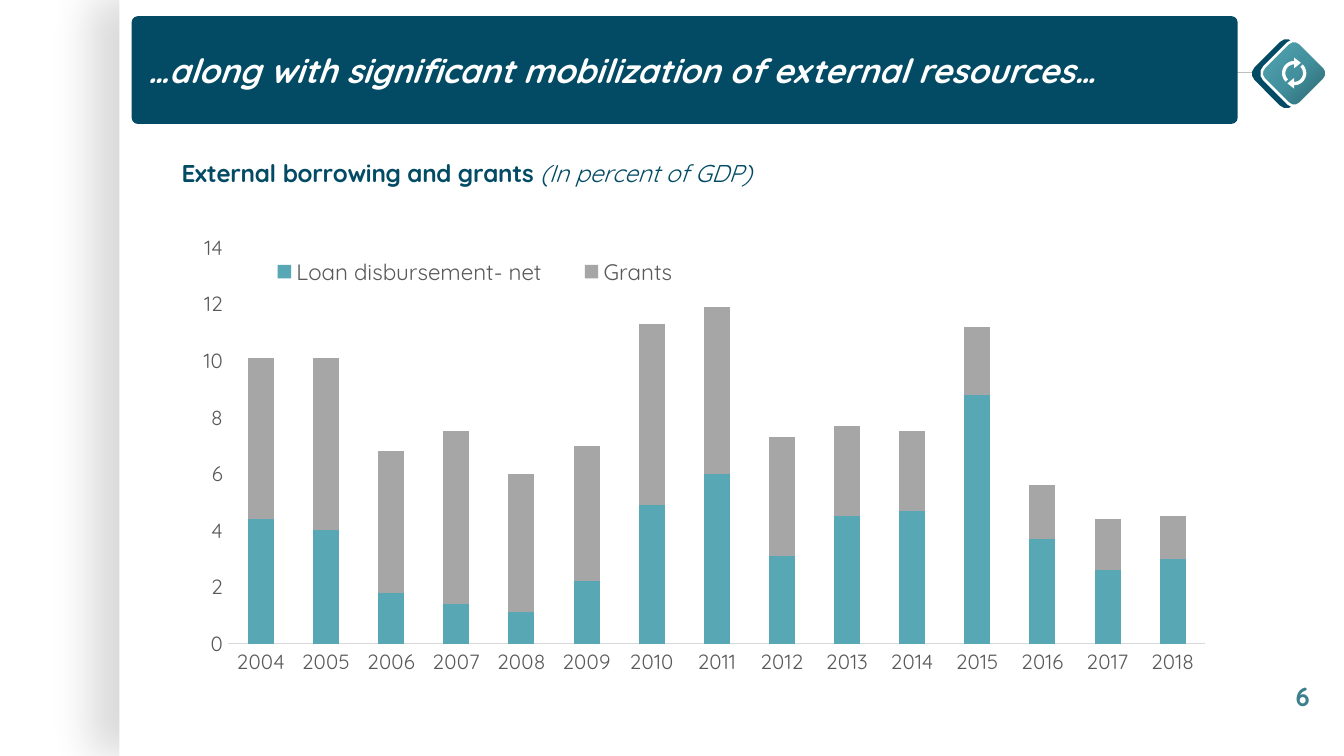
import math
from lxml import etree
from pptx import Presentation, oxml
from pptx import util as u
from pptx.chart.data import CategoryChartData
from pptx.dml.color import RGBColor
from pptx.enum import chart as ch, shapes, text
from pptx.oxml.ns import qn

Pt = u.Pt
NS = 'xmlns:a="http://schemas.openxmlformats.org/drawingml/2006/main"'
FONT, NAVY, TEAL, GREY = "Quicksand", "034B64", "57A7B5", "595959"


def paint(fmt, color):
    """Give a fill or a font a solid colour."""
    if hasattr(fmt, "solid"):
        fmt.solid()
        fmt.fore_color.rgb = RGBColor.from_string(color)
    else:
        fmt.name = FONT
        fmt.color.rgb = RGBColor.from_string(color)


def place(part, **fractions):
    """Position a chart part by fractions of the chart area."""
    for old in part.findall(qn("c:layout")):
        part.remove(old)
    layout = etree.Element(qn("c:layout"))
    manual = etree.SubElement(layout, qn("c:manualLayout"))
    for name, value in fractions.items():
        etree.SubElement(manual, qn("c:" + name)).set("val", str(value))
    overlay = part.find(qn("c:overlay"))
    if overlay is None:
        part.insert(0, layout)
    else:
        overlay.addprevious(layout)


prs = Presentation()
prs.slide_width, prs.slide_height = Pt(720), Pt(405)
s = prs.slides.add_slide(prs.slide_layouts[5])

# White page panel with a soft shadow on its left
panel = s.shapes.add_shape(shapes.MSO_SHAPE.RECTANGLE, Pt(64), 0, Pt(656), Pt(405))
paint(panel.fill, "FFFFFF")
panel.line.fill.background()
panel._element.spPr.append(oxml.parse_xml(
    f'<a:effectLst {NS}><a:outerShdw blurRad="{Pt(22.5)}" dist="{Pt(15)}" '
    'dir="10800000" algn="r" rotWithShape="0"><a:srgbClr val="000000">'
    '<a:alpha val="15000"/></a:srgbClr></a:outerShdw></a:effectLst>'))

# Line from banner to icon
link = s.shapes.add_connector(shapes.MSO_CONNECTOR.STRAIGHT,
                              Pt(634), Pt(39), Pt(692), Pt(39))
paint(link.line.fill, "BFBFBF")
link.line.width = Pt(0.75)
etree.SubElement(link._element.spPr, qn("a:effectLst"))

# Banner and title
banner = s.shapes.add_shape(shapes.MSO_SHAPE.ROUNDED_RECTANGLE,
                            Pt(71.3), Pt(9.4), Pt(591), Pt(56.2))
banner.adjustments[0] = 0.046
banner.shadow.inherit = False
paint(banner.fill, NAVY)
paint(banner.line.fill, NAVY)
banner.line.width = Pt(1.5)

title = s.shapes.title
s.shapes._spTree.append(title._element)
title.left, title.top, title.width, title.height = Pt(72), Pt(9.4), Pt(590), Pt(56.2)
tf = title.text_frame
tf.auto_size = text.MSO_AUTO_SIZE.NONE
tf.vertical_anchor = text.MSO_ANCHOR.MIDDLE
p = tf.paragraphs[0]
p.alignment = text.PP_ALIGN.LEFT
r = p.add_run()
r.text = "…along with significant mobilization of external resources…"
r.font.size, r.font.bold, r.font.italic = Pt(18), True, True
paint(r.font, "FFFFFF")

# Slide number
number = s.shapes.add_textbox(Pt(687), Pt(361), Pt(22), Pt(24))
number.text_frame.word_wrap = False
r = number.text_frame.paragraphs[0].add_run()
r.text = "6"
r.font.size, r.font.bold = Pt(14), True
paint(r.font, "3D808C")

# Icon: two diamonds
for left, top, size in ((674.7, 25, 29), (679.6, 25.6, 27.4)):
    diamond = s.shapes.add_shape(shapes.MSO_SHAPE.ROUNDED_RECTANGLE,
                                 Pt(left), Pt(top), Pt(size), Pt(size))
    diamond.rotation = 315
    diamond.shadow.inherit = False
    paint(diamond.fill, NAVY)
    diamond.line.fill.background()
paint(diamond.line.fill, "FFFFFF")
diamond.line.width = Pt(1.42)
stops = "".join(f'<a:gs pos="{pos * 1000}"><a:srgbClr val="{color}"/></a:gs>'
                for pos, color in ((0, "2F666F"), (26, "377B86"), (50, "43919F"), (100, TEAL)))
solid = diamond._element.spPr.find(qn("a:solidFill"))
solid.getparent().replace(solid, oxml.parse_xml(
    f'<a:gradFill {NS} rotWithShape="1"><a:gsLst>{stops}</a:gsLst>'
    '<a:path path="circle"><a:fillToRect l="100000" t="100000"/></a:path></a:gradFill>'))

# Icon: two circular arrows, the second a half turn of the first
angles = [math.radians(a) for a in range(-45, 91, 9)]
arrow = [(6.5 * math.cos(a), 6.5 * math.sin(a)) for a in angles]
arrow += [(0, 8.3), (-3.6, 5.5), (0, 2.6)]
arrow += [(4.7 * math.cos(a), 4.7 * math.sin(a)) for a in reversed(angles)]
builder = None
for turn in (1, -1):
    points = [(Pt(693.3 + turn * x), Pt(39.2 + turn * y)) for x, y in arrow]
    if builder is None:
        builder = s.shapes.build_freeform(*points[0])
    else:
        builder.move_to(*points[0])
    builder.add_line_segments(points[1:], close=True)
cycle = builder.convert_to_shape()
cycle.shadow.inherit = False
paint(cycle.fill, "FFFFFF")
cycle.line.fill.background()

# Stacked column chart
data = CategoryChartData(number_format="0.0")
data.categories = [str(year) for year in range(2004, 2019)]
data.add_series("Loan disbursement- net", (4.4, 4, 1.8, 1.4, 1.1, 2.2, 4.9, 6,
                                           3.1, 4.5, 4.7, 8.8, 3.7, 2.6, 3))
data.add_series("Grants", (5.7, 6.1, 5, 6.1, 4.9, 4.8, 6.4, 5.9,
                           4.2, 3.2, 2.8, 2.4, 1.9, 1.8, 1.5))
chart = s.shapes.add_chart(ch.XL_CHART_TYPE.COLUMN_STACKED, Pt(83.5), Pt(68.4),
                           Pt(579.6), Pt(328.3), data).chart
chart.font.size = Pt(12)
paint(chart.font, "000000")
plot = chart.plots[0]
plot.gap_width, plot.overlap, plot.vary_by_categories = 150, 100, False
for series, color in zip(plot.series, (TEAL, "A6A6A6")):
    paint(series.format.fill, color)
place(chart._chartSpace.chart.plotArea, layoutTarget="inner", xMode="edge",
      yMode="edge", x=0.067, y=0.196, w=0.903, h=0.646)

# Axes
for axis in (chart.category_axis, chart.value_axis):
    axis.major_tick_mark = axis.minor_tick_mark = ch.XL_TICK_MARK.NONE
    axis.has_major_gridlines = False
    axis.tick_labels.font.size = Pt(11)
    paint(axis.tick_labels.font, GREY)
paint(chart.category_axis.format.line.fill, "D9D9D9")
chart.category_axis.format.line.width = Pt(0.75)
values = chart.value_axis
values.format.line.fill.background()
values.minimum_scale, values.maximum_scale, values.major_unit = 0, 14, 2
values.tick_labels.number_format = "#,##0"
values.tick_labels.number_format_is_linked = False

# Legend
chart.has_legend = True
legend = chart.legend
legend.position = ch.XL_LEGEND_POSITION.BOTTOM
legend.include_in_layout = False
legend.font.size = Pt(12)
paint(legend.font, GREY)
place(legend._element, xMode="edge", yMode="edge", x=0.08, y=0.2, w=0.43, h=0.07)

# Chart title
chart.has_title = True
p = chart.chart_title.text_frame.paragraphs[0]
for words, emphasis in (("External borrowing and grants ", True), ("(In percent of GDP)", False)):
    r = p.add_run()
    r.text = words
    r.font.size, r.font.bold, r.font.italic = Pt(13), emphasis, not emphasis
    paint(r.font, NAVY)
place(chart.chart_title._element, xMode="edge", yMode="edge", x=0.02, y=0.04)

prs.save("out.pptx")
